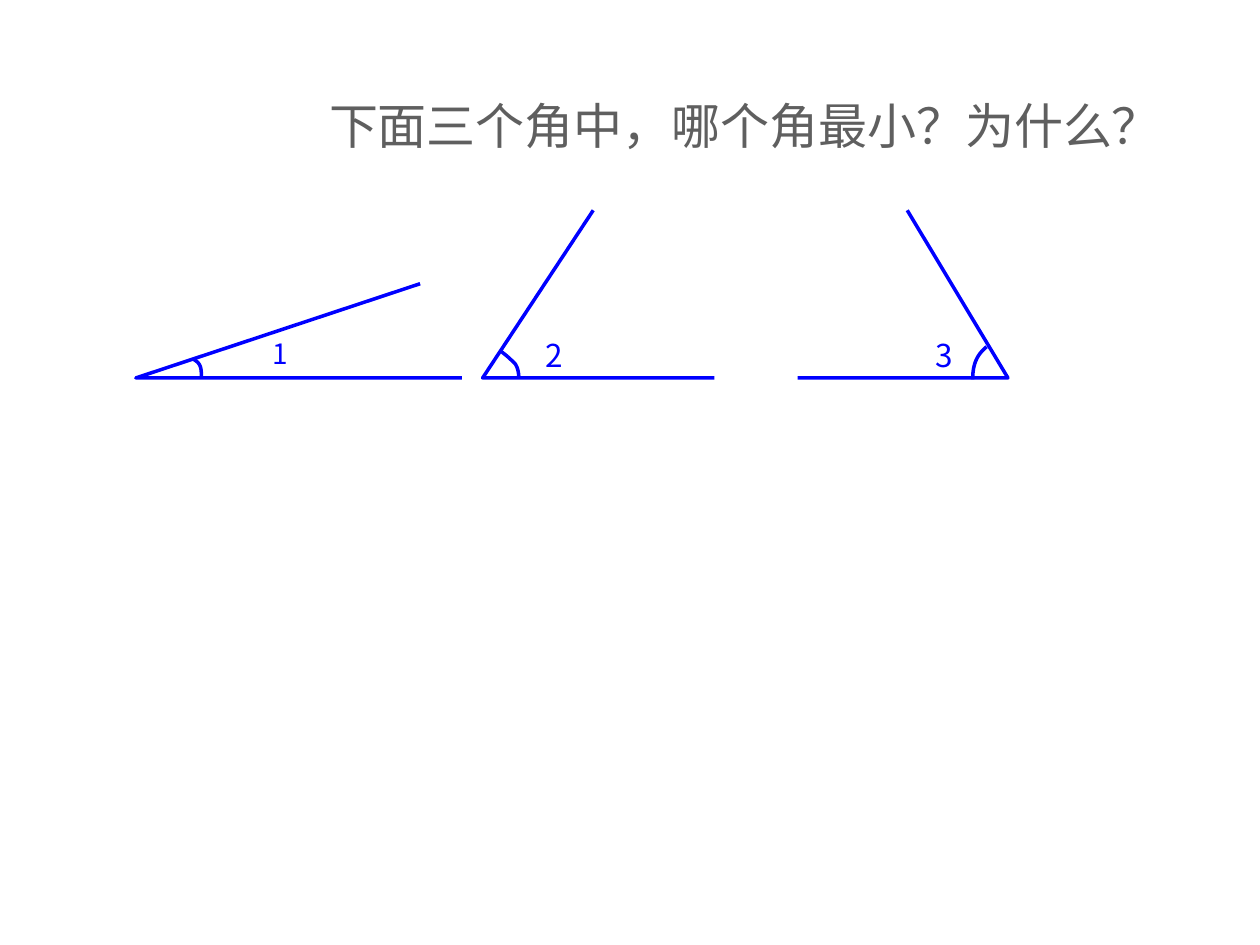
import pptx
import pptx.dml.color
import pptx.enum.text
import pptx.util

Cm, Pt = pptx.util.Cm, pptx.util.Pt
Color = pptx.dml.color.RGBColor.from_string
Align = pptx.enum.text.PP_ALIGN
Anchor = pptx.enum.text.MSO_ANCHOR

THEME = {
    "title": {"font": "Times New Roman", "size": 28, "color": "5F5F5F"},
    "label": {"font": "Noto Sans CJK SC", "color": "0000FF"},
    "line": {"color": "0000FF", "width": 2},
}
QUESTION = "下面三个角中，哪个角最小？为什么？"
BASE = 7.62
LABEL_TOP, LABEL_WIDTH, LABEL_HEIGHT = 6.78, 0.3, 0.63
ARC_STEPS = 12
ANGLES = [
    {"label": "1", "size": 16, "center": 5.65,
     "tip": (8.47, 5.72), "vertex": 2.74, "end": 9.31,
     "arc": [(3.89, 7.24), (4.06, 7.32), (4.06, 7.44), (4.06, 7.59)]},
    {"label": "2", "size": 18, "center": 11.15,
     "tip": (11.96, 4.24), "vertex": 9.73, "end": 14.4,
     "arc": [(10.11, 7.09), (10.24, 7.19), (10.29, 7.24), (10.39, 7.34),
             (10.44, 7.42), (10.46, 7.52), (10.46, 7.62)]},
    {"label": "3", "size": 18, "center": 19.0,
     "tip": (18.29, 4.24), "vertex": 20.32, "end": 16.08,
     "arc": [(19.89, 6.99), (19.69, 7.16), (19.61, 7.34), (19.61, 7.65)]},
]


def bezier(controls, t):
    weights = ((1 - t) ** 3, 3 * t * (1 - t) ** 2, 3 * t * t * (1 - t), t ** 3)
    return tuple(sum(w * p[axis] for w, p in zip(weights, controls)) for axis in (0, 1))


def curve_points(controls):
    points = [controls[0]]
    for first in range(0, len(controls) - 1, 3):
        segment = controls[first:first + 4]
        points += [bezier(segment, step / ARC_STEPS) for step in range(1, ARC_STEPS + 1)]
    return points


def draw_path(slide, points):
    start, *rest = [(Cm(x), Cm(y)) for x, y in points]
    builder = slide.shapes.build_freeform(*start)
    builder.add_line_segments(rest, close=False)
    shape = builder.convert_to_shape()
    shape.shadow.inherit = False
    shape.fill.background()
    shape.line.color.rgb = Color(THEME["line"]["color"])
    shape.line.width = Pt(THEME["line"]["width"])


def write(box, text, style, size, align):
    para = box.text_frame.paragraphs[0]
    para.alignment = align
    span = para.add_run()
    span.text = text
    span.font.name = style["font"]
    span.font.size = Pt(size)
    span.font.color.rgb = Color(style["color"])


def add_title(slide):
    title = slide.shapes.title
    title.left, title.top, title.width, title.height = Cm(6.38), Cm(1.8), Cm(17.58), Cm(1.45)
    title.text_frame.vertical_anchor = Anchor.MIDDLE
    title.text_frame.word_wrap = True
    write(title, QUESTION, THEME["title"], THEME["title"]["size"], Align.LEFT)


def add_angle(slide, angle):
    draw_path(slide, [angle["tip"], (angle["vertex"], BASE), (angle["end"], BASE)])
    draw_path(slide, curve_points(angle["arc"]))
    box = slide.shapes.add_textbox(Cm(angle["center"] - LABEL_WIDTH / 2), Cm(LABEL_TOP),
                                   Cm(LABEL_WIDTH), Cm(LABEL_HEIGHT))
    frame = box.text_frame
    frame.margin_left = frame.margin_right = frame.margin_top = frame.margin_bottom = 0
    frame.vertical_anchor = Anchor.TOP
    frame.word_wrap = False
    write(box, angle["label"], THEME["label"], angle["size"], Align.CENTER)


def main():
    deck = pptx.Presentation()
    deck.slide_width, deck.slide_height = Cm(25.4), Cm(19.05)
    slide = deck.slides.add_slide(deck.slide_layouts.get_by_name("Title Only"))
    add_title(slide)
    for angle in ANGLES:
        add_angle(slide, angle)
    deck.save("out.pptx")


if __name__ == "__main__":
    main()
